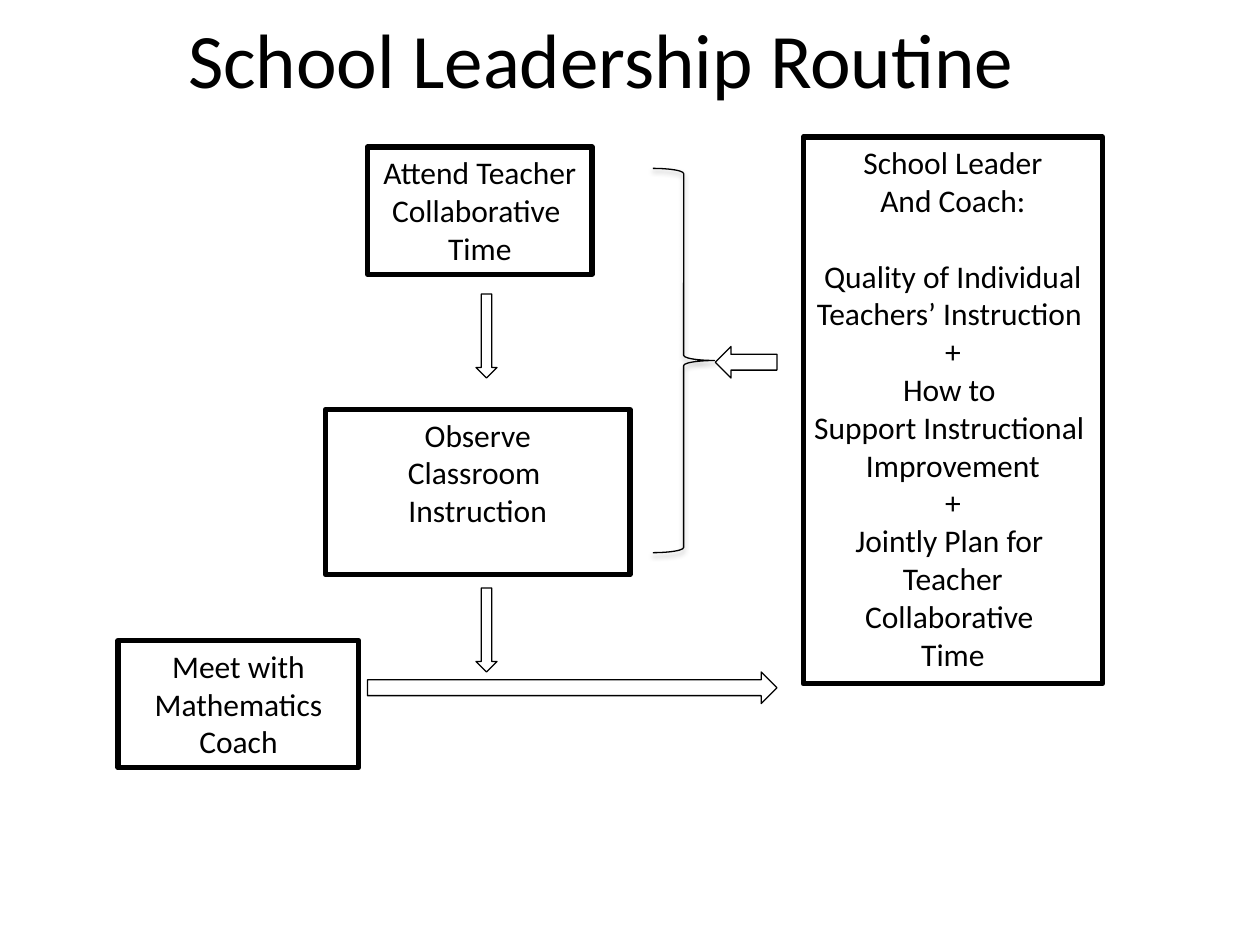
from lxml import etree
from pptx import Presentation
from pptx.dml.color import RGBColor
from pptx.enum import shapes, text
from pptx.oxml import ns
from pptx.util import Pt

BLACK = RGBColor(0, 0, 0)
WHITE = RGBColor(255, 255, 255)

deck = Presentation()
deck.slide_width, deck.slide_height = Pt(720), Pt(540)
slide = deck.slides.add_slide(deck.slide_layouts[6])


def add_text(lines, left, top, width, height, size=18, border=3, wrap=True,
             anchor=text.MSO_ANCHOR.TOP, right_inset=7.2, gap_before=None):
    box = slide.shapes.add_textbox(Pt(left), Pt(top), Pt(width), Pt(height))
    if border:
        box.line.color.rgb = BLACK
        box.line.width = Pt(border)
    frame = box.text_frame
    frame.word_wrap = wrap
    frame.auto_size = text.MSO_AUTO_SIZE.NONE
    frame.vertical_anchor = anchor
    frame.margin_right = Pt(right_inset)
    frame.text = "\n".join(lines)
    for number, paragraph in enumerate(frame.paragraphs):
        paragraph.alignment = text.PP_ALIGN.CENTER
        paragraph.font.name = "Calibri"
        paragraph.font.size = Pt(size)
        paragraph.font.color.rgb = BLACK
        if number == gap_before:
            paragraph.space_before = Pt(21.6)


add_text(["School Leadership Routine"], 0, 6, 720, 54, size=44, border=0,
         anchor=text.MSO_ANCHOR.MIDDLE, right_inset=40)
add_text(["Attend Teacher", "Collaborative ", "Time"],
         210, 84, 128.4, 72.7, wrap=False)
add_text(["Observe", "Classroom ", "Instruction"], 186, 234, 174, 94.5)
add_text(["Meet with", "Mathematics", "Coach"], 67.5, 366, 137.5, 72.7)
add_text(["School Leader", "And Coach:", "Quality of Individual",
          "Teachers’ Instruction ", "+", "How to ", "Support Instructional ",
          "Improvement", "+", "Jointly Plan for ", "Teacher",
          "Collaborative ", "Time"],
         459, 78.3, 171, 312.5, wrap=False, gap_before=2)

KIND = shapes.MSO_SHAPE
for kind, left, top, width, height in [
    (KIND.RIGHT_ARROW, 210, 384, 234, 18),
    (KIND.DOWN_ARROW, 272, 336, 12, 48),
    (KIND.LEFT_ARROW, 408.7, 198, 35.3, 18),
    (KIND.RIGHT_BRACE, 373, 96.2, 35.3, 219.6),
    (KIND.DOWN_ARROW, 272, 168, 12, 48),
]:
    mark = slide.shapes.add_shape(kind, Pt(left), Pt(top), Pt(width), Pt(height))
    mark.shadow.inherit = False
    mark.line.color.rgb = BLACK
    mark.line.width = Pt(0.75)
    if kind == KIND.RIGHT_BRACE:
        mark.fill.background()
        effects = mark._element.spPr.find(ns.qn("a:effectLst"))
        shadow = etree.SubElement(effects, ns.qn("a:outerShdw"), blurRad=str(Pt(3.1)),
                                  dist=str(Pt(1.8)), dir="5400000", rotWithShape="0")
        tint = etree.SubElement(shadow, ns.qn("a:srgbClr"), val=str(BLACK))
        etree.SubElement(tint, ns.qn("a:alpha"), val="35000")
    else:
        mark.fill.solid()
        mark.fill.fore_color.rgb = WHITE

deck.save("out.pptx")
